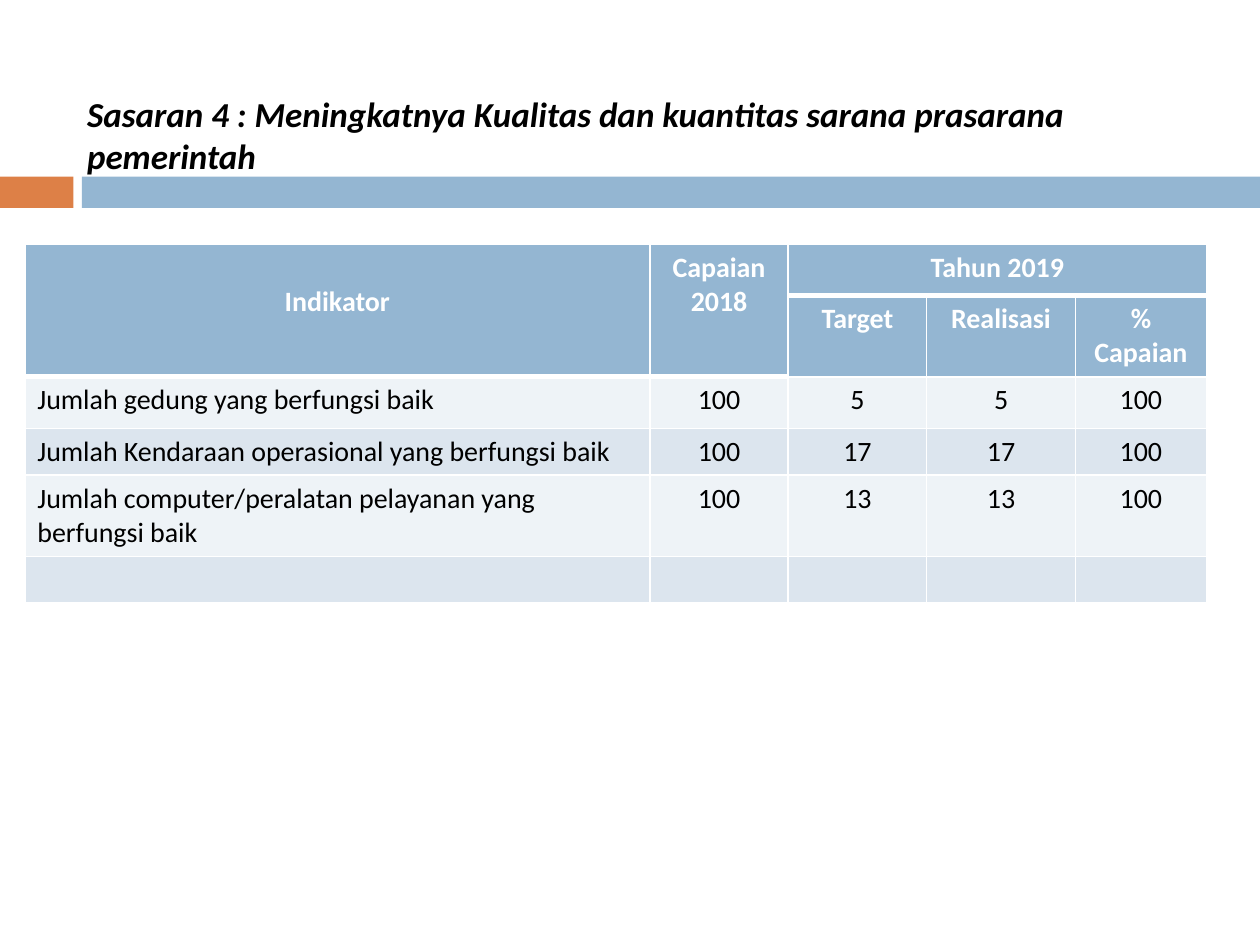
from lxml.etree import SubElement
from pptx import Presentation
from pptx.dml.color import RGBColor
from pptx.enum.shapes import MSO_SHAPE as Preset
from pptx.enum.text import MSO_ANCHOR as Anchor, MSO_AUTO_SIZE as AutoSize, PP_ALIGN as Align
from pptx.oxml.ns import qn
from pptx.util import Cm, Pt

BLUE, ORANGE, WHITE, BLACK = "94B6D2", "DD8047", "FFFFFF", "000000"
BANDS = ("EEF3F7", "DCE5EE")
HEADER_ROWS = 2
COLUMN_WIDTHS = (12.6, 2.79, 2.79, 3, 2.64)
ROW_HEIGHTS = (1.03, 1.63, 1.04, 0.94, 1.63, 0.94)
INDICATORS = (
    ("Indikator", "Capaian 2018", "Tahun 2019", "", ""),
    ("", "", "Target", "Realisasi", "% Capaian"),
    ("Jumlah gedung yang berfungsi baik", "100", "5", "5", "100"),
    ("Jumlah Kendaraan operasional yang berfungsi baik", "100", "17", "17", "100"),
    ("Jumlah computer/peralatan pelayanan yang berfungsi baik", "100", "13", "13", "100"),
    ("", "", "", "", ""),
)
MERGES = (((0, 0), (1, 0)), ((0, 1), (1, 1)), ((0, 2), (0, 4)))


def rgb(code):
    """Turn a hex string into a colour."""
    return RGBColor.from_string(code)


def assign(target, formats):
    """Set every attribute named in the format dict."""
    for name, value in formats.items():
        setattr(target, name, value)


class SlideBuilder:
    """Hold the text style and the slide being filled."""

    def __init__(self, slide, font="Calibri"):
        """Keep the slide and its font."""
        self.slide, self.font = slide, font

    def text(self, frame, wording, size, color, align, **formats):
        """Put one styled paragraph into a text frame."""
        paragraph = frame.paragraphs[0]
        paragraph.alignment = align
        if not wording:
            paragraph._p.get_or_add_endParaRPr().set("sz", str(size * 100))
            return
        run = paragraph.add_run()
        run.text = wording
        assign(run.font, {"name": self.font, "size": Pt(size), **formats})
        run.font.color.rgb = rgb(color)

    def title(self, wording, left, top, width, height):
        """Place and fill the title placeholder."""
        heading = self.slide.shapes.title
        assign(heading, {"left": Cm(left), "top": Cm(top), "width": Cm(width), "height": Cm(height)})
        assign(heading.text_frame, {"word_wrap": True, "auto_size": AutoSize.NONE,
                                    "vertical_anchor": Anchor.TOP})
        self.text(heading.text_frame, wording, 20, BLACK, Align.LEFT, bold=True, italic=True)

    def bar(self, color, left, top, width, height):
        """Draw a plain filled rectangle."""
        band = self.slide.shapes.add_shape(
            Preset.RECTANGLE, Cm(left), Cm(top), Cm(width), Cm(height))
        band.shadow.inherit = False
        band.fill.solid()
        band.fill.fore_color.rgb = rgb(color)
        band.line.fill.background()

    def borders(self, cell, **weights):
        """Give a cell white borders of the given point widths."""
        properties = cell._tc.get_or_add_tcPr()
        for side, weight in weights.items():
            edge = SubElement(properties, qn(f"a:ln{side}"), w=str(Pt(weight)))
            SubElement(SubElement(edge, qn("a:solidFill")), qn("a:srgbClr"), val=WHITE)

    def table(self, rows, left, top):
        """Build the indicator table with its two-row header."""
        grid = self.slide.shapes.add_table(
            len(rows), len(COLUMN_WIDTHS), Cm(left), Cm(top),
            Cm(sum(COLUMN_WIDTHS)), Cm(sum(ROW_HEIGHTS))).table
        for column, width in zip(grid.columns, COLUMN_WIDTHS):
            column.width = Cm(width)
        for row, height in zip(grid.rows, ROW_HEIGHTS):
            row.height = Cm(height)
        for first, last in MERGES:
            grid.cell(*first).merge(grid.cell(*last))
        for r, row in enumerate(rows):
            for c, wording in enumerate(row):
                self.cell(grid.cell(r, c), wording, r, c)
        grid.cell(0, 0).margin_top = Cm(0.81)

    def cell(self, cell, wording, row, column):
        """Style one cell by its place in the table."""
        header = row < HEADER_ROWS
        heavy_row = 1 if column < 2 else 0
        last_row = row + cell.span_height - 1 if cell.is_merge_origin else row
        self.borders(cell, L=1, R=1, T=3 if row == heavy_row + 1 else 1,
                     B=3 if last_row == heavy_row else 1)
        cell.fill.solid()
        cell.fill.fore_color.rgb = rgb(BLUE if header else BANDS[row % 2])
        self.text(cell.text_frame, wording, 16, WHITE if header else BLACK,
                  Align.CENTER if header or column else Align.LEFT, bold=header)


def main():
    """Build and save the slide."""
    deck = Presentation()
    assign(deck, {"slide_width": Cm(25.4), "slide_height": Cm(19.05)})
    builder = SlideBuilder(deck.slides.add_slide(deck.slide_layouts[5]))
    builder.bar(ORANGE, 0, 3.56, 1.48, 0.63)
    builder.bar(BLUE, 1.65, 3.56, 23.75, 0.63)
    builder.table(INDICATORS, 0.5, 4.93)
    builder.title("Sasaran 4 : Meningkatnya Kualitas dan kuantitas sarana prasarana pemerintah",
                  1.5, 1.73, 21.67, 1.12)
    deck.save("out.pptx")


if __name__ == "__main__":
    main()
